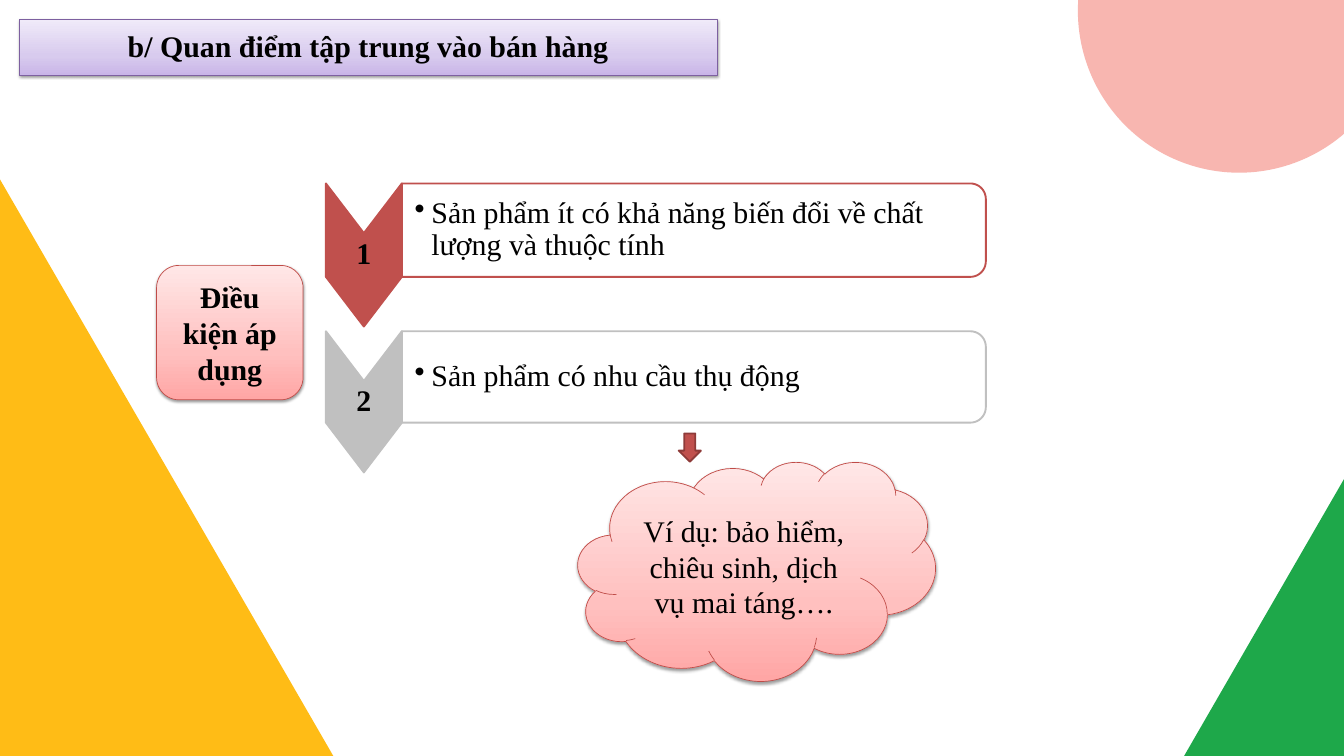
"""Build the slide on the selling concept and its conditions of use."""
from math import cos, pi, sin

from pptx import Presentation
from pptx.dml.color import RGBColor
from pptx.enum.shapes import MSO_SHAPE as SHAPE
from pptx.enum.text import MSO_ANCHOR as ANCHOR, MSO_AUTO_SIZE as AUTO, PP_ALIGN as ALIGN
from pptx.oxml import parse_xml
from pptx.oxml.ns import nsdecls, qn
from pptx.util import Inches, Pt

THEME = {
    "font": "Times New Roman", "size": 32, "text": "000000", "white": "FFFFFF",
    "red": "C0504D", "dark_red": "8E3B39", "red_edge": "BF4C48", "purple_edge": "7D60A0",
    "purples": ("C9B5E8", "D8CBEE", "F0EAF9"), "pinks": ("FFA6A5", "FFC0BF", "FFE7E7"),
}
TITLE = "b/ Quan điểm tập trung vào bán hàng"
TITLE_BOX = (0.29, 0.29, 10.38, 0.83)
DECORATIONS = [
    (SHAPE.ISOSCELES_TRIANGLE, (-4.96, 2.67, 9.92, 8.58), "FFBC16"),
    (SHAPE.ISOSCELES_TRIANGLE, (17.43, 7.13, 5.14, 4.45), "1EA84A"),
    (SHAPE.OVAL, (16.04, -2.25, 4.8, 4.82), "F8B6B0"),
]
CALLOUTS = [
    (SHAPE.ROUNDED_RECTANGLE, (2.33, 3.95, 2.18, 2), "Điều kiện áp dụng", True),
    (SHAPE.CLOUD, (8.6, 6.87, 5.32, 3.26), "Ví dụ: bảo hiểm, chiêu sinh, dịch vụ mai táng….", False),
]
ARROW_BOX = (10.1, 6.45, 0.33, 0.42)
CONDITIONS = [
    ("Sản phẩm ít có khả năng biến đổi về chất lượng và thuộc tính", "C0504D", 2.73, 1.39),
    ("Sản phẩm có nhu cầu thụ động", "C0C0C0", 4.93, 1.36),
]
CHEVRON_LEFT, PANEL_LEFT, PANEL_RIGHT = 4.85, 5.98, 14.67
NOTCH, RADIUS, ARC_STEPS = 0.74, 0.23, 10


def rgb(color):
    return RGBColor.from_string(color)


def paint(s, fill, line=None, width=2):
    s.shadow.inherit = False
    s.fill.solid()
    s.fill.fore_color.rgb = rgb(fill)
    outline(s, line, width)


def outline(s, color, width):
    if color:
        s.line.color.rgb = rgb(color)
        s.line.width = Pt(width)
    else:
        s.line.fill.background()


def paint_raised(s, colors, line):
    stops = "".join(f'<a:gs pos="{pos * 1000}"><a:srgbClr val="{c}"/></a:gs>'
                    for pos, c in zip((0, 35, 100), colors))
    sp_pr = s._element.spPr
    sp_pr.append(parse_xml(f'<a:gradFill {nsdecls("a")} rotWithShape="1"><a:gsLst>{stops}</a:gsLst>'
                           '<a:lin ang="16200000" scaled="0"/></a:gradFill>'))
    outline(s, line, 0.75)
    s.shadow.inherit = False
    sp_pr.find(qn("a:effectLst")).append(parse_xml(
        f'<a:outerShdw {nsdecls("a")} blurRad="{Pt(3.1)}" dist="{Pt(1.6)}" dir="5400000" '
        'rotWithShape="0"><a:srgbClr val="000000"><a:alpha val="38000"/></a:srgbClr></a:outerShdw>'))


def write(s, text, bold=False, align=ALIGN.CENTER, spacing=None, insets=None):
    tf = s.text_frame
    tf.word_wrap = True
    tf.auto_size = AUTO.NONE
    tf.vertical_anchor = ANCHOR.MIDDLE
    if insets:
        tf.margin_left, tf.margin_top, tf.margin_right, tf.margin_bottom = map(Inches, insets)
    p = tf.paragraphs[0]
    p.alignment = align
    if spacing:
        p.line_spacing = spacing
    r = p.add_run()
    r.text = text
    r.font.name = THEME["font"]
    r.font.size = Pt(THEME["size"])
    r.font.bold = bold
    r.font.color.rgb = rgb(THEME["text"])
    return p


def add_bullet(p):
    p_pr = p._p.get_or_add_pPr()
    p_pr.set("marL", str(Inches(0.25)))
    p_pr.set("indent", str(Inches(-0.25)))
    p_pr.append(parse_xml(f'<a:buChar {nsdecls("a")} char="•"/>'))


def add_preset(shapes, kind, box):
    return shapes.add_shape(kind, *map(Inches, box))


def add_outline_shape(shapes, points):
    start, *rest = [(Inches(x), Inches(y)) for x, y in points]
    builder = shapes.build_freeform(*start, scale=1.0)
    builder.add_line_segments(rest, close=True)
    return builder.convert_to_shape()


def corner(cx, cy, start):
    angles = [start + pi / 2 * i / ARC_STEPS for i in range(ARC_STEPS + 1)]
    return [(cx + RADIUS * cos(a), cy + RADIUS * sin(a)) for a in angles]


def add_condition(shapes, number, text, color, top, height):
    bottom, middle = top + height, (CHEVRON_LEFT + PANEL_LEFT) / 2
    chevron = add_outline_shape(shapes, [
        (PANEL_LEFT, top), (PANEL_LEFT, bottom), (middle, bottom + NOTCH),
        (CHEVRON_LEFT, bottom), (CHEVRON_LEFT, top), (middle, top + NOTCH)])
    paint(chevron, color, color)
    write(chevron, str(number), True, spacing=0.9, insets=(0.02, 0.58, 0.02, 0.58))

    arc_x = PANEL_RIGHT - RADIUS
    panel = add_outline_shape(shapes, [
        (PANEL_LEFT, top), *corner(arc_x, top + RADIUS, -pi / 2),
        *corner(arc_x, bottom - RADIUS, 0), (PANEL_LEFT, bottom)])
    paint(panel, THEME["white"], color)
    fill_color = panel._element.spPr.find(qn("a:solidFill"))[0]
    fill_color.append(parse_xml(f'<a:alpha {nsdecls("a")} val="90000"/>'))
    add_bullet(write(panel, text, align=ALIGN.LEFT, spacing=0.9, insets=(0.19, 0.07, 0.07, 0.07)))


def add_title(shapes):
    title = shapes.title
    title.left, title.top, title.width, title.height = map(Inches, TITLE_BOX)
    title._element.spPr.append(parse_xml(
        f'<a:prstGeom {nsdecls("a")} prst="roundRect"><a:avLst/></a:prstGeom>'))
    paint_raised(title, THEME["purples"], THEME["purple_edge"])
    write(title, TITLE, True, spacing=0.9, insets=(0.09,) * 4)


def main():
    prs = Presentation()
    prs.slide_width, prs.slide_height = Inches(20), Inches(11.25)
    shapes = prs.slides.add_slide(prs.slide_layouts[5]).shapes

    for kind, box, color in DECORATIONS:
        paint(add_preset(shapes, kind, box), color)
    add_title(shapes)
    for number, condition in enumerate(CONDITIONS, 1):
        add_condition(shapes, number, *condition)
    paint(add_preset(shapes, SHAPE.DOWN_ARROW, ARROW_BOX), THEME["red"], THEME["dark_red"])
    for kind, box, text, bold in CALLOUTS:
        s = add_preset(shapes, kind, box)
        paint_raised(s, THEME["pinks"], THEME["red_edge"])
        write(s, text, bold)

    prs.save("out.pptx")


if __name__ == "__main__":
    main()
